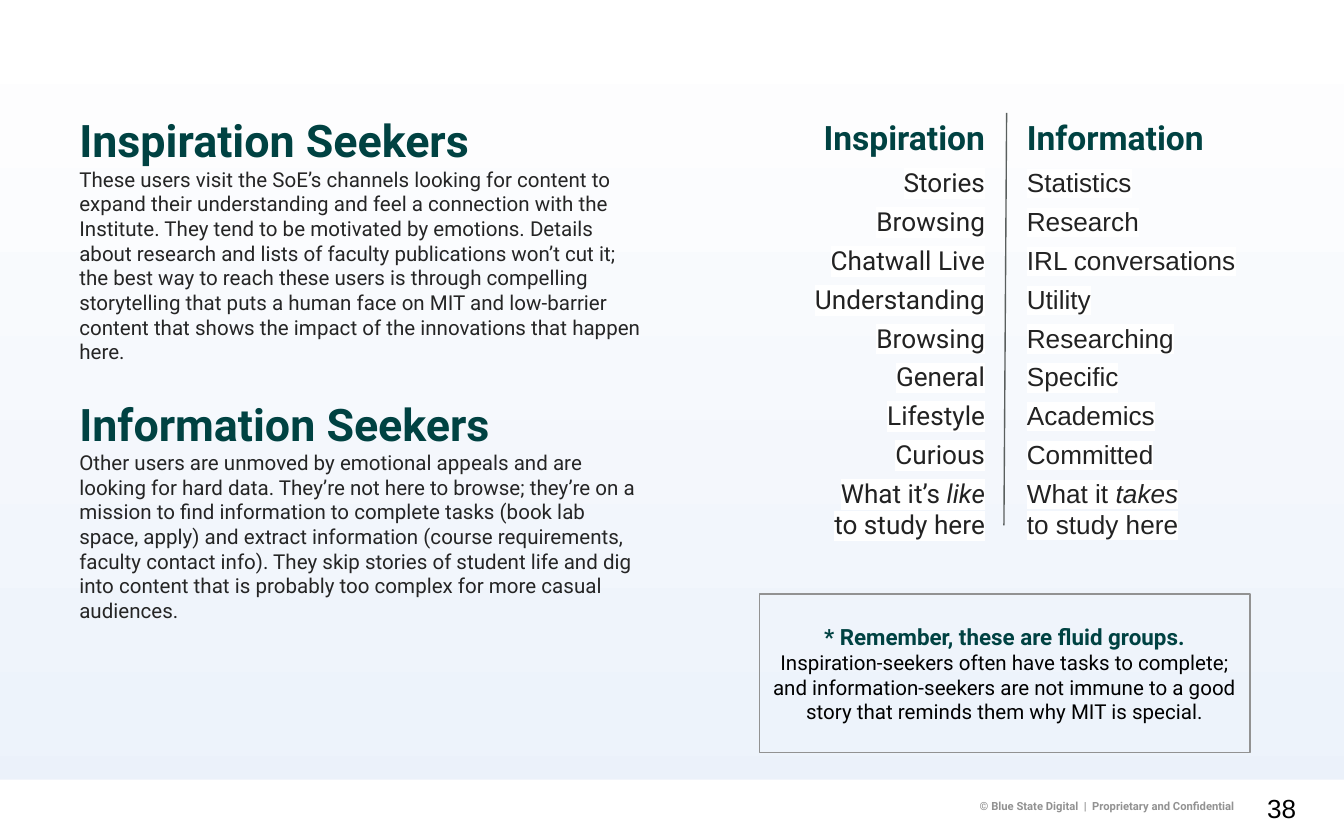
from lxml.etree import SubElement
from pptx import Presentation
from pptx.dml.color import RGBColor
from pptx.enum.shapes import MSO_CONNECTOR, MSO_SHAPE
from pptx.enum.text import MSO_ANCHOR, MSO_AUTO_SIZE, PP_ALIGN
from pptx.oxml.ns import qn
from pptx.util import Inches, Pt

COLORS = {
    "heading": "004242", "body": "252525", "list": "222222", "black": "000000",
    "white": "FFFFFF", "sky": "EBF1FA", "gray": "929292", "divider": "5A5F5E",
}
INSPIRATION = ["Stories", "Browsing", "Chatwall Live", "Understanding", "Browsing",
               "General", "Lifestyle", "Curious"]
INFORMATION = ["Statistics", "Research", "IRL conversations", "Utility", "Researching",
               "Specific", "Academics", "Committed"]
SEEKERS = [
    ("Inspiration Seekers",
     "These users visit the SoE’s channels looking for content to expand their "
     "understanding and feel a connection with the Institute. They tend to be motivated "
     "by emotions. Details about research and lists of faculty publications won’t cut it; "
     "the best way to reach these users is through compelling storytelling that puts a "
     "human face on MIT and low-barrier content that shows the impact of the innovations "
     "that happen here."),
    ("Information Seekers",
     "Other users are unmoved by emotional appeals and are looking for hard data. They’re "
     "not here to browse; they’re on a mission to find information to complete tasks (book "
     "lab space, apply) and extract information (course requirements, faculty contact "
     "info). They skip stories of student life and dig into content that is probably too "
     "complex for more casual audiences."),
]


def color(name):
    """Return the named palette colour."""
    return RGBColor.from_string(COLORS[name])


def write(paragraph, text, size=11, font="Roboto", ink="body", bold=False,
          italic=False, highlight=None):
    """Add one formatted span to a paragraph."""
    span = paragraph.add_run()
    span.text = text
    span.font.size = Pt(size)
    span.font.bold = bold
    span.font.italic = italic
    span.font.color.rgb = color(ink)
    if highlight:
        mark = SubElement(span.font._element, qn("a:highlight"))
        SubElement(mark, qn("a:srgbClr"), val=COLORS[highlight])
    span.font.name = font


class SlideBuilder:
    """Hold the style and the current slide."""

    def __init__(self, deck):
        """Add a comparison page with a soft vertical gradient."""
        self.page = deck.slides.add_slide(deck.slide_layouts[4])
        fill = self.page.background.fill
        fill.gradient()
        fill.gradient_angle = 270
        for stop, name in zip(fill.gradient_stops, ("white", "sky")):
            stop.color.rgb = color(name)

    def place(self, box, area, anchor=MSO_ANCHOR.TOP, inset=0.1):
        """Position a box and return its text frame."""
        box.left, box.top, box.width, box.height = map(Inches, area)
        frame = box.text_frame
        frame.word_wrap = True
        frame.auto_size = MSO_AUTO_SIZE.NONE
        frame.vertical_anchor = anchor
        frame.margin_left = frame.margin_right = Inches(inset)
        frame.margin_top = frame.margin_bottom = Inches(inset)
        return frame

    def body(self, index, area):
        """Place a body placeholder."""
        return self.place(self.page.placeholders[index], area)

    def label(self, area, inset=0.1):
        """Place a vertically centred text box."""
        box = self.page.shapes.add_textbox(0, 0, 0, 0)
        return self.place(box, area, MSO_ANCHOR.MIDDLE, inset)

    def rectangle(self, area, fill=None, line=None):
        """Place a rectangle with an optional fill and outline."""
        box = self.page.shapes.add_shape(MSO_SHAPE.RECTANGLE, 0, 0, 0, 0)
        box.shadow.inherit = False
        if fill:
            box.fill.solid()
            box.fill.fore_color.rgb = color(fill)
        else:
            box.fill.background()
        if line:
            box.line.color.rgb = color(line)
            box.line.width = Pt(0.75)
        else:
            box.line.fill.background()
        return self.place(box, area, MSO_ANCHOR.MIDDLE)

    def paragraph(self, frame, align=PP_ALIGN.LEFT, before=0, after=0, spacing=1.0,
                  indent=0):
        """Start a paragraph without a bullet, reusing the first empty one."""
        first = frame.paragraphs[0]
        paragraph = frame.add_paragraph() if first.runs else first
        properties = paragraph._p.get_or_add_pPr()
        properties.set("marL", str(Inches(indent)))
        properties.set("indent", "0")
        SubElement(properties, qn("a:buNone"))
        paragraph.alignment = align
        paragraph.space_before = Pt(before)
        paragraph.space_after = Pt(after)
        paragraph.line_spacing = spacing
        return paragraph

    def trait_list(self, index, area, heading, traits, closing, font, align):
        """Fill a column with a heading, traits and a two-line closing trait."""
        frame = self.body(index, area)
        write(self.paragraph(frame, align, after=5), heading, size=18, ink="heading",
              bold=True)
        style = {"size": 14, "font": font, "ink": "list", "highlight": "white"}
        for trait in traits:
            write(self.paragraph(frame, align, after=4), trait, **style)
        last = self.paragraph(frame, align, after=4)
        opening, stressed = closing
        write(last, opening, **style)
        write(last, stressed, italic=True, **style)
        last.add_line_break()
        write(last, "to study here", **style)

    def divider(self, start, end):
        """Draw a thin straight line."""
        line = self.page.shapes.add_connector(
            MSO_CONNECTOR.STRAIGHT, *map(Inches, start + end))
        line.line.color.rgb = color("divider")
        line.line.width = Pt(0.75)
        SubElement(line._element.spPr, qn("a:effectLst"))

    def remove_empty_placeholders(self):
        """Remove placeholders that hold no text."""
        for box in list(self.page.placeholders):
            if not box.text_frame.text:
                box._element.getparent().remove(box._element)


def main():
    """Build and save the slide."""
    deck = Presentation()
    deck.slide_width, deck.slide_height = Inches(10), Inches(6.25)
    slide = SlideBuilder(deck)

    slide.rectangle((0, 5.8, 10, 0.48), fill="white")
    footer = slide.label((6.76, 5.93, 2.58, 0.15), inset=0.03)
    write(slide.paragraph(footer, spacing=0.8, indent=0.5),
          "© Blue State Digital  |  Proprietary and Confidential",
          size=6, ink="gray", bold=True)
    number = slide.label((9.33, 5.77, 0.57, 0.48))
    write(slide.paragraph(number), "38", size=14, font="Arial", ink="black")

    seekers = slide.body(1, (0.49, 0.68, 4.42, 4.98))
    for position, (heading, description) in enumerate(SEEKERS):
        write(slide.paragraph(seekers, before=13 * position, spacing=1.15), heading,
              size=24, ink="heading", bold=True)
        write(slide.paragraph(seekers), description)

    slide.trait_list(4, (7.54, 0.77, 1.99, 3.04), "Information", INFORMATION,
                     ("What it ", "takes"), "Arial", PP_ALIGN.LEFT)
    slide.trait_list(2, (5.88, 0.77, 1.55, 3.04), "Inspiration", INSPIRATION,
                     ("What it’s ", "like"), "Roboto", PP_ALIGN.RIGHT)
    slide.divider((7.49, 0.84), (7.47, 3.91))

    reminder = slide.rectangle((5.65, 4.42, 3.65, 1.18), line="gray")
    note = slide.paragraph(reminder, PP_ALIGN.CENTER)
    write(note, "* Remember, these are fluid groups. ", size=12, ink="heading", bold=True)
    write(note, "Inspiration-seekers often have tasks to complete; and information-seekers "
          "are not immune to a good story that reminds them why MIT is special.",
          ink="black")

    slide.remove_empty_placeholders()
    deck.save("out.pptx")


if __name__ == "__main__":
    main()
